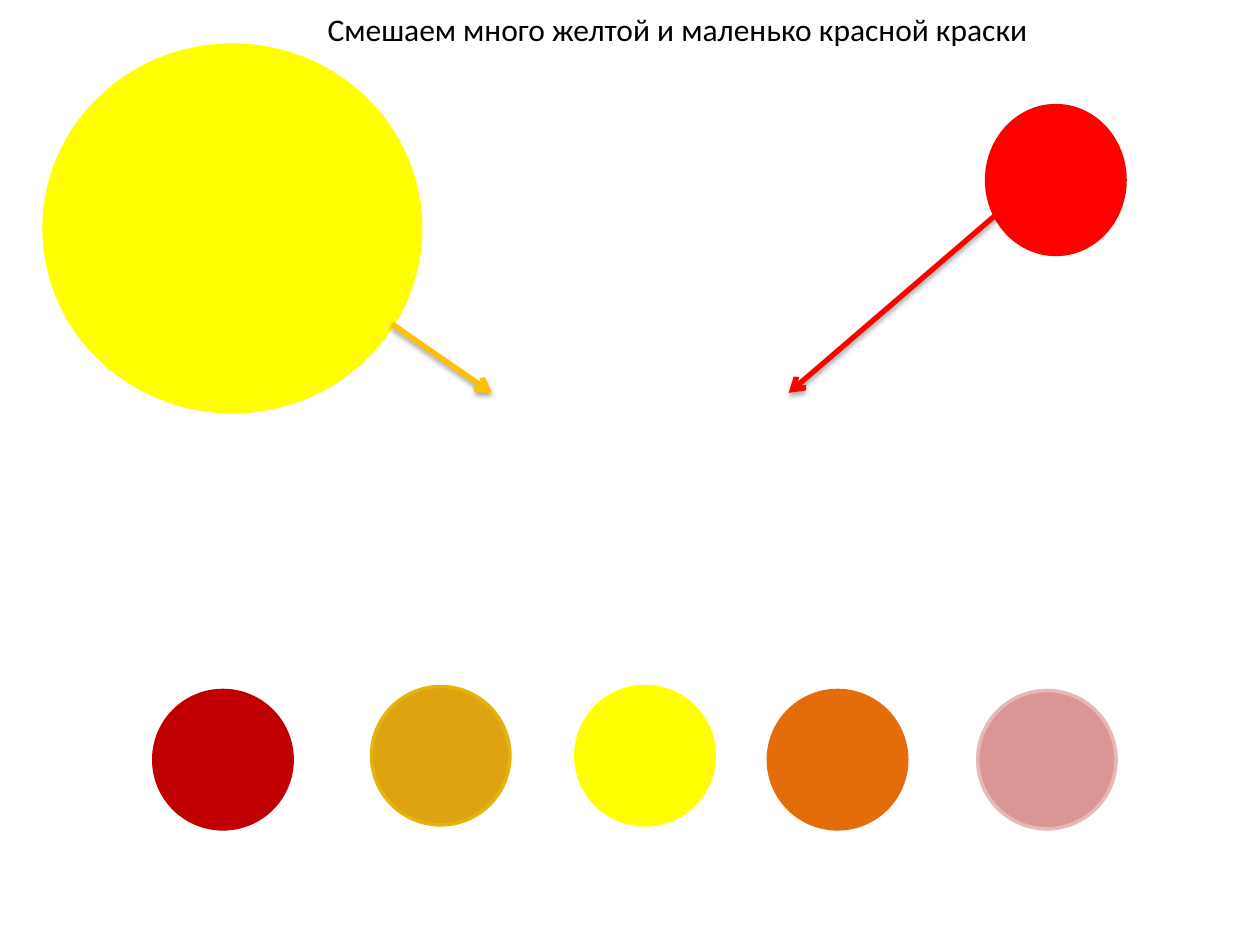
from pptx import Presentation
from pptx.dml.color import RGBColor as Rgb
from pptx.enum.shapes import MSO_CONNECTOR as Link, MSO_SHAPE as Form
from pptx.enum.text import MSO_ANCHOR as Anchor, MSO_AUTO_SIZE as Fit, PP_ALIGN as Align
from pptx.oxml import parse_xml
from pptx.oxml.ns import nsdecls
from pptx.util import Cm, Pt

COLORS = {
    "black": "000000",
    "yellow": "FFFF00",
    "red": "FF0000",
    "amber": "FFC000",
    "crimson": "C00000",
    "ochre": "DDA311",
    "gold": "E2B40C",
    "orange": "E46C0A",
    "pink": "D99694",
    "rose": "E6B9B8",
}


def color(name):
    return Rgb.from_string(COLORS[name])


def write(frame, text, size=18, font="Calibri", ink="black", align=Align.LEFT):
    part = frame.paragraphs[0]
    part.alignment = align
    run = part.add_run()
    run.text = text
    run.font.size = Pt(size)
    run.font.name = font
    run.font.color.rgb = color(ink)


class Painter:
    """Holds the slide and the line widths shared by its elements."""

    edge = Pt(2)
    stroke = Pt(3)

    def __init__(self, slide):
        self.slide = slide

    def title(self, text, left, top, width, height):
        box = self.slide.shapes.title
        box.left, box.top = Cm(left), Cm(top)
        box.width, box.height = Cm(width), Cm(height)
        frame = box.text_frame
        frame.word_wrap = False
        frame.auto_size = Fit.SHAPE_TO_FIT_TEXT
        frame.vertical_anchor = Anchor.TOP
        write(frame, text)

    def spot(self, left, top, width, height, fill, line=None):
        """Draw a spot of paint; its edge has the fill colour by default."""
        oval = self.slide.shapes.add_shape(
            Form.OVAL, Cm(left), Cm(top), Cm(width), Cm(height))
        oval.shadow.inherit = False
        oval.fill.solid()
        oval.fill.fore_color.rgb = color(fill)
        oval.line.color.rgb = color(line or fill)
        oval.line.width = self.edge

    def arrow(self, start, end, ink):
        link = self.slide.shapes.add_connector(
            Link.STRAIGHT, *(Cm(n) for n in (*start, *end)))
        link.line.color.rgb = color(ink)
        link.line.width = self.stroke
        props = link.line._get_or_add_ln()
        props.append(parse_xml(f'<a:tailEnd {nsdecls("a")} type="arrow"/>'))
        link._element.spPr.append(parse_xml(
            f'<a:effectLst {nsdecls("a")}>'
            f'<a:outerShdw blurRad="{Pt(3.1)}" dist="{Pt(1.8)}" dir="5400000" rotWithShape="0">'
            f'<a:srgbClr val="{COLORS["black"]}"><a:alpha val="35000"/></a:srgbClr>'
            '</a:outerShdw></a:effectLst>'))


def main():
    deck = Presentation()
    deck.slide_width, deck.slide_height = Cm(25.4), Cm(19.05)
    art = Painter(deck.slides.add_slide(deck.slide_layouts[5]))

    art.title("Смешаем много желтой и маленько красной краски", 6.35, 0.08, 14.78, 1.02)

    art.spot(0.89, 0.91, 7.59, 7.39, "yellow")
    art.spot(19.89, 2.13, 2.79, 3, "red")
    art.arrow((7.9, 6.53), (9.91, 7.92), "amber")
    art.arrow((20.09, 4.32), (15.9, 7.92), "red")

    size, high, low = 2.79, 13.84, 13.92
    choices = [
        (3.1, low, "crimson", None),
        (7.49, high, "ochre", "gold"),
        (11.61, high, "yellow", None),
        (15.49, low, "orange", None),
        (19.71, low, "pink", "rose"),
    ]
    for left, top, fill, line in choices:
        art.spot(left, top, size, size, fill, line)

    deck.save("out.pptx")


if __name__ == "__main__":
    main()
